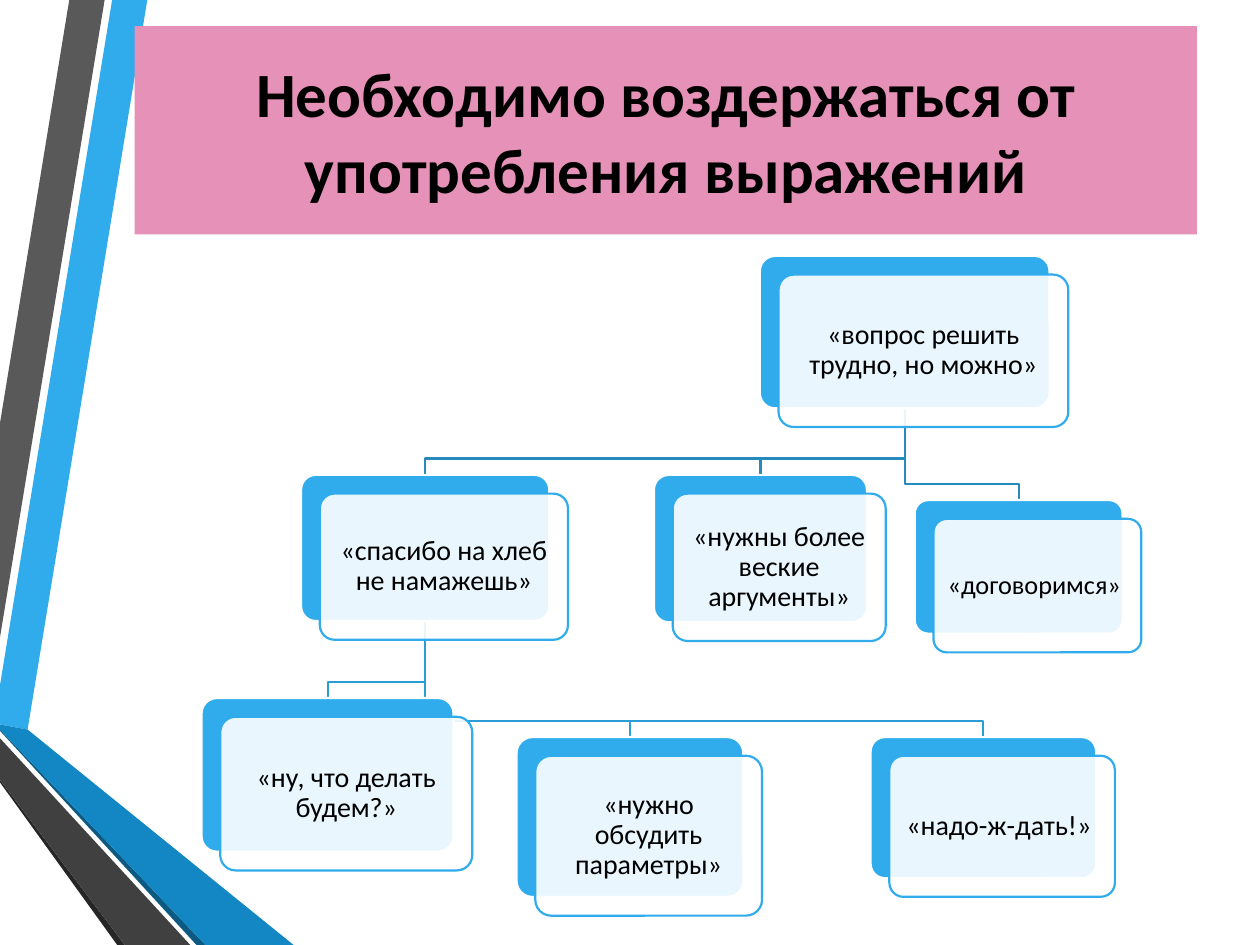
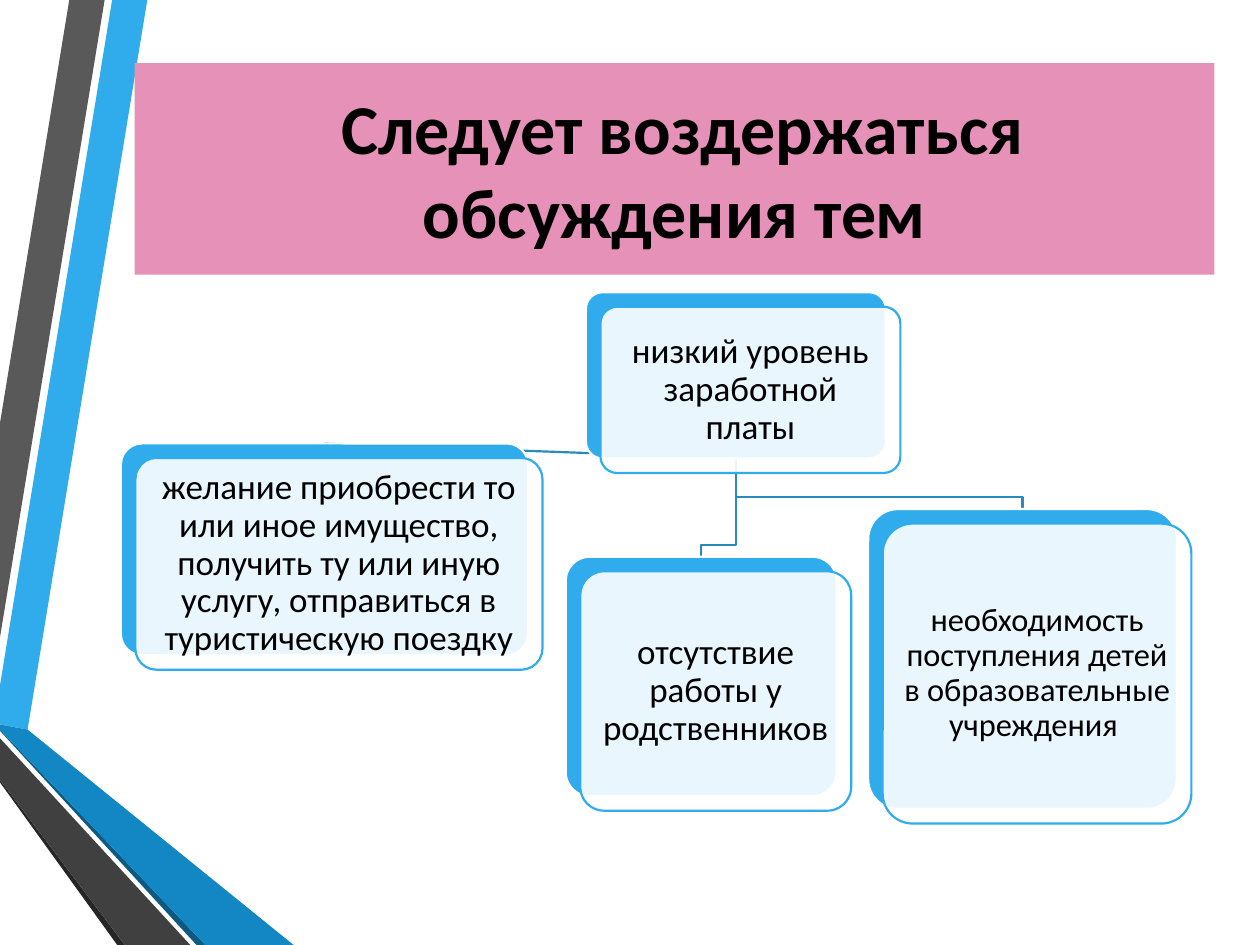
from lxml import etree
from pptx import Presentation
from pptx import util as u
from pptx.dml import color
from pptx.enum import shapes, text
from pptx.oxml import ns

Pt = u.Pt
FONT = "Calibri"
PINK, BLUE, WHITE, BLACK = "E691B7", "30ACEC", "FFFFFF", "000000"
LEVEL_LINES = {1: "268ABD", 2: "2C9CD6"}
LINE_W = 1.25
BANDS = [
    (BLUE, [(0, 391.7), (0, 414), (15.8, 416.9), (84.2, 0), (64.1, 0)]),
    ("595959", [(59.8, 0), (39.6, 0), (0, 241.9), (0, 364.3)]),
    ("262626", [(0, 445.7), (0, 447.1), (67, 540), (71.3, 540)]),
    ("0C5A82", [(0, 416.9), (0, 417.6), (112.3, 540), (117.4, 540)]),
    ("1287C3", [(0, 416.9), (117.4, 540), (167.8, 540), (15.8, 416.9), (0, 414)]),
    ("404040", [(0, 445.7), (71.3, 540), (108.7, 540), (0, 421.9)]),
]


def rgb(value):
    """Turn a hex string into a colour."""
    return color.RGBColor.from_string(value)


def paint(sp, fill=None, line=None):
    """Set fill and line of a shape and drop its shadow."""
    sp.shadow.inherit = False
    if fill:
        sp.fill.solid()
        sp.fill.fore_color.rgb = rgb(fill)
    else:
        sp.fill.background()
    if line:
        sp.line.color.rgb = rgb(line)
        sp.line.width = Pt(LINE_W)
    else:
        sp.line.fill.background()


def outline(s, x, y, points, close):
    """Draw a freeform through points counted from x, y."""
    pts = [(Pt(px), Pt(py)) for px, py in points]
    builder = s.shapes.build_freeform(*pts[0], scale=1.0)
    builder.add_line_segments(pts[1:], close=close)
    return builder.convert_to_shape(Pt(x), Pt(y))


def write(sp, words, size, bold=False, spacing=None):
    """Write one centred paragraph in the middle of a shape."""
    tf = sp.text_frame
    tf.word_wrap = True
    tf.vertical_anchor = text.MSO_ANCHOR.MIDDLE
    p = tf.paragraphs[0]
    p.alignment = text.PP_ALIGN.CENTER
    if spacing:
        p.line_spacing = spacing
    r = p.add_run()
    r.text = words
    r.font.name, r.font.size, r.font.bold = FONT, Pt(size), bold
    r.font.color.rgb = rgb(BLACK)
    return tf


def bands(s, x=0, y=0):
    """Draw the slanted bands along the left edge."""
    for fill, points in BANDS:
        paint(outline(s, x, y, points, True), fill)


def title(s, box, words, size):
    """Draw the pink title panel."""
    sp = s.shapes.add_shape(shapes.MSO_SHAPE.RECTANGLE, *map(Pt, box))
    paint(sp, PINK)
    write(sp, words, size, bold=True)


def panel(s, box, fill, line):
    """Draw one rounded panel of a card."""
    sp = s.shapes.add_shape(shapes.MSO_SHAPE.ROUNDED_RECTANGLE, *map(Pt, box))
    sp.adjustments[0] = 0.1
    paint(sp, fill, line)
    return sp


def card(s, box, shift, words, size):
    """Draw a blue panel with a translucent text panel shifted over it."""
    x, y, w, h = box
    back = panel(s, box, BLUE, WHITE)
    front = panel(s, (x + shift, y + shift, w, h), WHITE, BLUE)
    clr = front.fill._xPr.find(".//" + ns.qn("a:srgbClr"))
    etree.SubElement(clr, ns.qn("a:alpha"), val="90000")
    tf = write(front, words, size, spacing=0.9)
    tf.margin_left = tf.margin_right = Pt(0.3 * size)
    tf.margin_top = tf.margin_bottom = Pt(0.3 * size)
    return back


def elbow(s, x, y, parent, child, gap, line):
    """Draw a bent line from a parent's bottom to a child's top."""
    px, py = parent[0] + parent[2] / 2, parent[1] + parent[3]
    cx, cy = child[0] + child[2] / 2, child[1]
    points = [(px, py), (px, cy - gap), (cx, cy - gap), (cx, cy)]
    paint(outline(s, x, y, points, False), line=line)


def straight(s, line):
    """Add a straight connector that is joined to its cards later."""
    c = s.shapes.add_connector(shapes.MSO_CONNECTOR.STRAIGHT, 0, 0, 0, 0)
    c.line.color.rgb = rgb(line)
    c.line.width = Pt(LINE_W)
    etree.SubElement(c.element.spPr, ns.qn("a:effectLst"))
    return c


def tree(s, x, y, cards, links, shift, gap):
    """Draw lines, then cards, from the tree's top left corner."""
    joins = []
    for parent, child, level in links:
        a, b = cards[parent][0], cards[child][0]
        if b[1] > a[1] + a[3]:
            elbow(s, x, y, a, b, gap, LEVEL_LINES[level])
        else:
            joins.append((straight(s, LEVEL_LINES[level]), parent, child))
    backs = [card(s, (x + cx, y + cy, w, h), shift, words, size)
             for (cx, cy, w, h), words, size in cards]
    for c, parent, child in joins:
        c.begin_connect(backs[parent], 2)
        c.end_connect(backs[child], 0)


def phrases_slide(s):
    """Build the slide about phrases to avoid."""
    bands(s)
    title(s, (77, 15, 607, 119),
          "Необходимо воздержаться от употребления выражений", 36)
    cards = [
        ((319, 0, 165.6, 87.1), "«вопрос решить трудно, но можно»", 16),
        ((56.9, 125.2, 141.8, 83.5), "«спасибо на хлеб не намажешь»", 16),
        ((0, 252.7, 144, 87.8), "«ну, что делать будем?»", 16),
        ((180, 275, 129.6, 91.4), "«нужно обсудить параметры»", 16),
        ((382.3, 275, 128.9, 80.6), "«надо-ж-дать!» ", 16),
        ((258.5, 125.2, 121.7, 84.2), "«нужны более веские аргументы»", 16),
        ((407.5, 139.6, 118.8, 76.3), "«договоримся» ", 15),
    ]
    links = [(0, 6, 1), (0, 5, 1), (1, 4, 2), (1, 3, 2), (1, 2, 2), (0, 1, 1)]
    tree(s, 115.2, 146.2, cards, links, shift=10.7, gap=9.3)


def topics_slide(s):
    """Build the slide about topics to avoid."""
    bands(s)
    title(s, (77, 36, 617, 121), " Следует воздержаться обсуждения тем", 40)
    cards = [
        ((265.7, 0, 171.4, 95), "низкий уровень заработной платы", 20),
        ((0, 86.4, 232.6, 121),
         "желание приобрести то или иное имущество, получить ту или иную "
         "услугу, отправиться в туристическую поездку", 20),
        ((254.2, 151.2, 154.8, 136.8), "отсутствие работы у родственников", 20),
        ((427, 123.9, 176.4, 171.4),
         "необходимость поступления детей в образовательные учреждения ", 18.5),
    ]
    links = [(0, 3, 1), (0, 2, 1), (0, 1, 1)]
    tree(s, 69.1, 167, cards, links, shift=8.3, gap=7)


def main():
    """Build and save the slides."""
    prs = Presentation()
    prs.slide_width, prs.slide_height = Pt(720), Pt(540)
    for build in (phrases_slide, topics_slide):
        build(prs.slides.add_slide(prs.slide_layouts[6]))
    prs.save("out.pptx")


if __name__ == "__main__":
    main()
